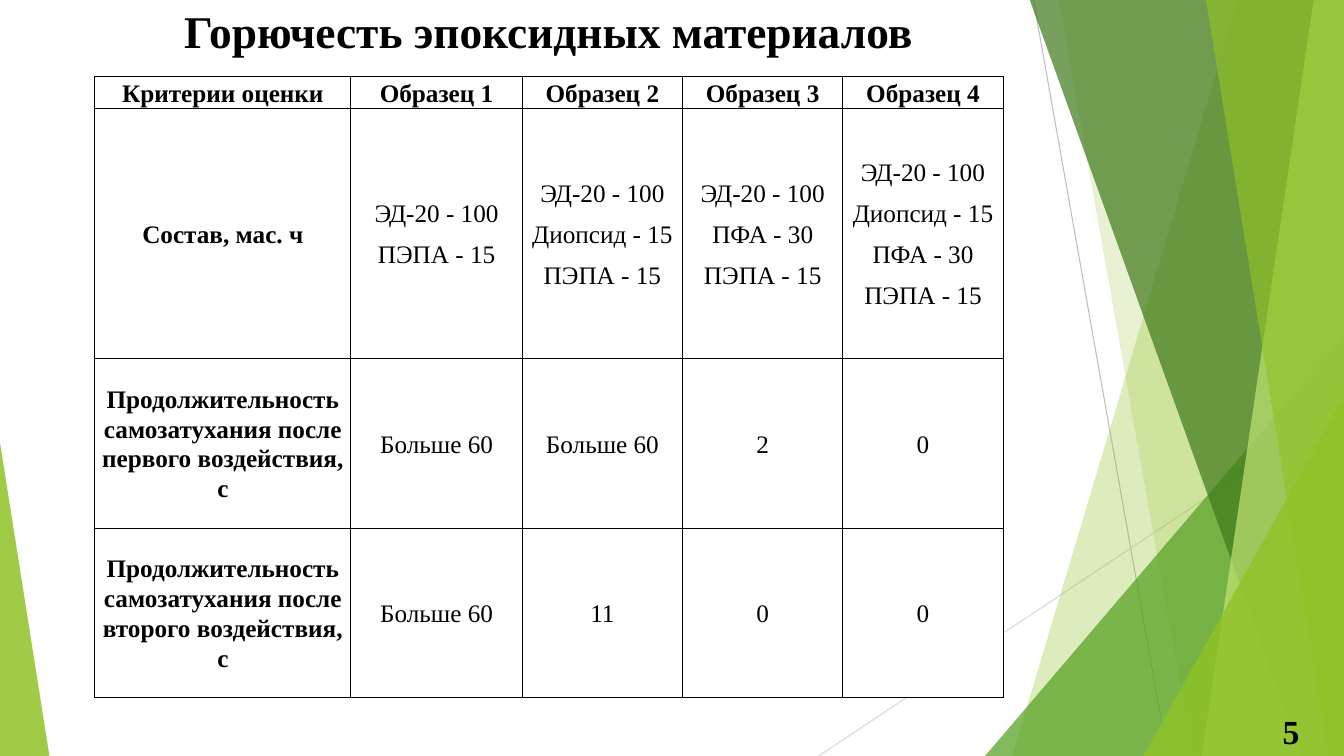
from lxml import etree
from pptx import Presentation
from pptx import util as u
from pptx.dml.color import RGBColor
from pptx.enum import shapes, text
from pptx.oxml.ns import qn

PX = 9144  # 100 px to the inch
W, H = 1333, 750
FONT = "Times New Roman"
COLORS = {
    "text": "000000", "cell": "FFFFFF", "border": "000000",
    "line_dark": "BFBFBF", "line_light": "D9D9D9",
    "lime": "90C226", "green": "54A021", "forest": "3F7819", "pale": "C0E474",
}

LINES = [((1025, 0), (1158, H), "line_dark"), ((W, 403), (812, H), "line_light")]
# Right-hand bands: top-left x, bottom-left x, colour, opacity %
BACK_BANDS = [(1228, 1004, "lime", 30), (1050, 1183, "lime", 20)]
FRONT_BANDS = [(1021, 1291, "forest", 70), (1303, 1192, "pale", 70),
               (1196, 1318, "lime", 65)]

COLUMNS = [254, 170, 159, 159, 159]
ROWS = [32, 248, 168, 168]
CELLS = [
    ["Критерии оценки", "Образец 1", "Образец 2", "Образец 3", "Образец 4"],
    ["Состав, мас. ч",
     "ЭД-20 - 100\nПЭПА - 15",
     "ЭД-20 - 100\nДиопсид - 15\nПЭПА - 15",
     "ЭД-20 - 100\nПФА - 30\nПЭПА - 15",
     "ЭД-20 - 100\nДиопсид - 15\nПФА - 30\nПЭПА - 15"],
    ["Продолжительность самозатухания после первого воздействия, с",
     "Больше 60", "Больше 60", "2", "0"],
    ["Продолжительность самозатухания после второго воздействия, с",
     "Больше 60", "11", "0", "0"],
]


def px(*values):
    return [u.Emu(v * PX) for v in values]


def rgb(name):
    return RGBColor.from_string(COLORS[name])


def set_attrs(obj, values):
    for name, value in values.items():
        setattr(obj, name, value)


def write(tf, content, size, bold, **paragraph):
    """Fill a text frame with centred paragraphs, one per line of content."""
    tf.text = content
    for p in tf.paragraphs:
        set_attrs(p, {"alignment": text.PP_ALIGN.CENTER, **paragraph})
        for r in p.runs:
            set_attrs(r.font, {"name": FONT, "size": u.Pt(size), "bold": bold})
            r.font.color.rgb = rgb("text")


def paint(sp, color, opacity):
    sp.shadow.inherit = False
    sp.fill.solid()
    sp.fill.fore_color.rgb = rgb(color)
    sp.line.fill.background()
    clr = sp._element.spPr.find(qn("a:solidFill")).find(qn("a:srgbClr"))
    etree.SubElement(clr, qn("a:alpha"), val=str(opacity * 1000))


def add_line(s, start, end, color):
    line = s.shapes.add_connector(shapes.MSO_CONNECTOR.STRAIGHT, *px(*start, *end))
    line.line.color.rgb = rgb(color)
    line.line.width = u.Pt(0.75)
    etree.SubElement(line._element.spPr, qn("a:effectLst"))


def add_band(s, top_x, bottom_x, color, opacity):
    builder = s.shapes.build_freeform(top_x, -1, scale=PX)
    builder.add_line_segments([(W, -1), (W, H), (bottom_x, H)], close=True)
    paint(builder.convert_to_shape(), color, opacity)


def add_triangle(s, left, top, width, apex, color, opacity):
    """Triangle standing on the slide's bottom edge; apex runs from 0 to 1."""
    sp = s.shapes.add_shape(shapes.MSO_SHAPE.ISOSCELES_TRIANGLE,
                            *px(left, top, width, H - top))
    sp.adjustments[0] = apex
    paint(sp, color, opacity)


def add_decor(s):
    for line in LINES:
        add_line(s, *line)
    for band in BACK_BANDS:
        add_band(s, *band)
    add_triangle(s, 977, 333, 356, 1, "green", 72)
    for band in FRONT_BANDS:
        add_band(s, *band)
    add_triangle(s, 1134, 393, 199, 1, "lime", 80)
    add_triangle(s, 0, 439, 49, 0, "lime", 85)


def add_title(s, content):
    title = s.shapes.title
    set_attrs(title, dict(zip(("left", "top", "width", "height"), px(74, 0, 940, 61))))
    tf = title.text_frame
    set_attrs(tf, {"auto_size": text.MSO_AUTO_SIZE.NONE, "word_wrap": True,
                   "vertical_anchor": text.MSO_ANCHOR.MIDDLE})
    write(tf, content, 32.4, True)


def add_borders(cell):
    tc_pr = cell._tc.get_or_add_tcPr()
    for i, side in enumerate(("lnL", "lnR", "lnT", "lnB")):
        ln = etree.Element(qn(f"a:{side}"), w=str(u.Pt(1)))
        fill = etree.SubElement(ln, qn("a:solidFill"))
        etree.SubElement(fill, qn("a:srgbClr"), val=COLORS["border"])
        tc_pr.insert(i, ln)


def add_results_table(s):
    frame = s.shapes.add_table(len(ROWS), len(COLUMNS),
                               *px(94, 76, sum(COLUMNS), sum(ROWS)))
    table = frame.table
    set_attrs(table, {"first_row": False, "horz_banding": False})
    for column, width in zip(table.columns, px(*COLUMNS)):
        column.width = width
    for row, height in zip(table.rows, px(*ROWS)):
        row.height = height
    side, none = px(7, 0)
    for i, row in enumerate(CELLS):
        for j, content in enumerate(row):
            cell = table.cell(i, j)
            set_attrs(cell, {"margin_left": side, "margin_right": side,
                             "margin_top": none, "margin_bottom": none,
                             "vertical_anchor": text.MSO_ANCHOR.MIDDLE})
            cell.fill.solid()
            cell.fill.fore_color.rgb = rgb("cell")
            add_borders(cell)
            write(cell.text_frame, content, 18, i == 0 or j == 0,
                  line_spacing=1.07, space_after=u.Pt(8))


def add_page_number(s, number):
    tf = s.shapes.add_textbox(*px(1259, 700, 43, 50)).text_frame
    set_attrs(tf, {"word_wrap": True,
                   "auto_size": text.MSO_AUTO_SIZE.SHAPE_TO_FIT_TEXT})
    write(tf, number, 24, True)


def main():
    prs = Presentation()
    prs.slide_width, prs.slide_height = px(W, H)
    s = prs.slides.add_slide(prs.slide_layouts[5])
    add_decor(s)
    add_title(s, "Горючесть эпоксидных материалов")
    add_results_table(s)
    add_page_number(s, "5")
    prs.save("out.pptx")


if __name__ == "__main__":
    main()
